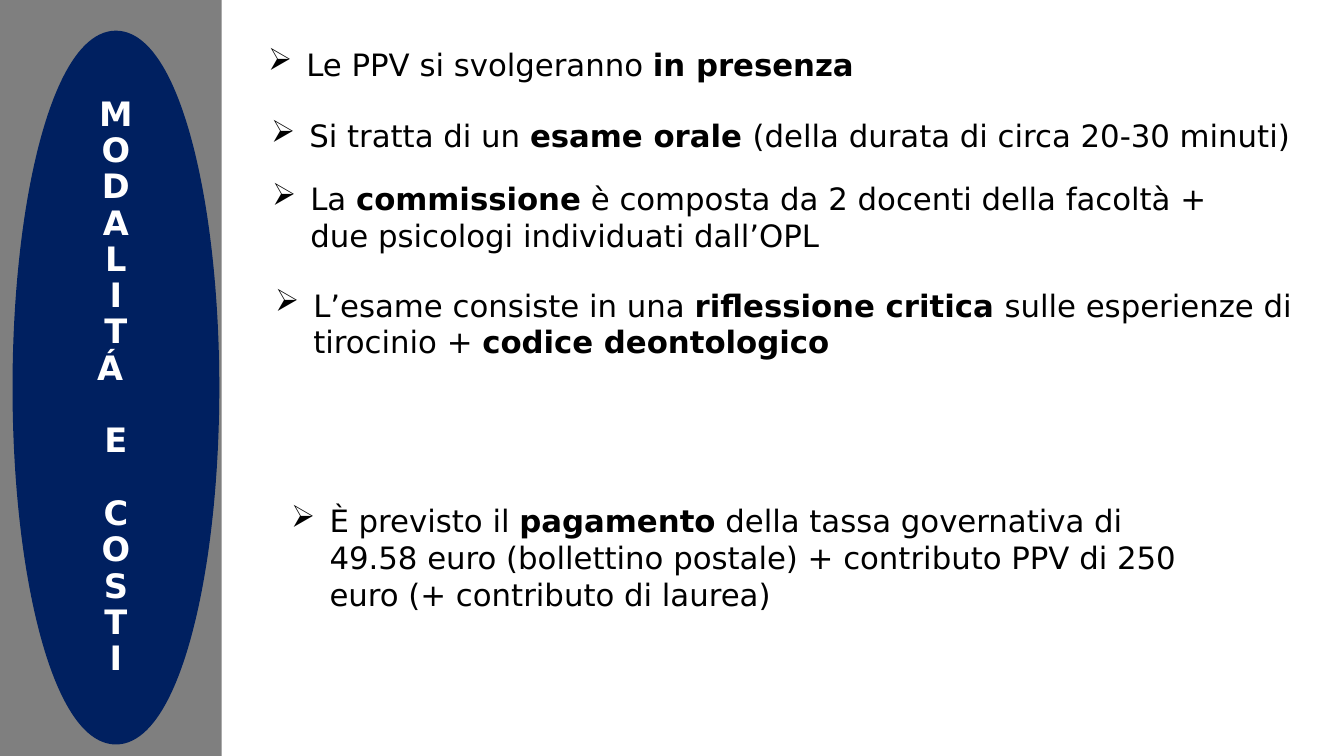
from dataclasses import dataclass

from lxml.etree import SubElement
from pptx import Presentation
from pptx.dml.color import RGBColor
from pptx.enum.shapes import MSO_SHAPE
from pptx.enum.text import MSO_ANCHOR, MSO_AUTO_SIZE, PP_ALIGN
from pptx.oxml.ns import qn
from pptx.util import Inches, Pt


@dataclass(frozen=True)
class Theme:
    font: str = "DejaVu Sans"
    band: RGBColor = RGBColor(0x7F, 0x7F, 0x7F)
    navy: RGBColor = RGBColor(0x00, 0x20, 0x60)
    ink: RGBColor = RGBColor(0, 0, 0)
    white: RGBColor = RGBColor(0xFF, 0xFF, 0xFF)
    body_size: float = 22
    title_size: float = 24
    title_spacing: float = 0.9
    word_gap: float = 26
    outline: float = 13.75


THEME = Theme()
TITLE_WORDS = ["MODALITÁ", "E", "COSTI"]
POINTS = [
    (2.56, 0.4, 9.28, 0.47, "Le PPV si svolgeranno **in presenza**"),
    (2.59, 1.11, 10.53, 0.47,
     "Si tratta di un **esame orale **(della durata di circa 20-30 minuti)"),
    (2.6, 1.73, 10.53, 0.84,
     "La **commissione** è composta da 2 docenti della facoltà +\n"
     "due psicologi individuati dall’OPL"),
    (2.63, 2.79, 10.53, 1.21,
     "L’esame consiste in una **riflessione critica **sulle esperienze di "
     "tirocinio + **codice deontologico**"),
    (2.79, 4.93, 9.28, 1.21,
     "È previsto il **pagamento** della tassa governativa di 49.58 euro "
     "(bollettino postale) + contributo PPV di 250 euro (+ contributo di laurea)"),
]


def write(p, text, *, size, color, bold=False):
    for i, part in enumerate(text.split("**")):
        for j, line in enumerate(part.split("\n")):
            if j:
                p.add_line_break()
            if line:
                r = p.add_run()
                r.text = line
                r.font.name = THEME.font
                r.font.size = Pt(size)
                r.font.color.rgb = color
                r.font.bold = bold or i % 2 == 1


def add_filled(s, kind, box, color, outline=0):
    sp = s.shapes.add_shape(kind, *map(Inches, box))
    sp.shadow.inherit = False
    sp.fill.solid()
    sp.fill.fore_color.rgb = color
    if outline:
        sp.line.color.rgb = color
        sp.line.width = Pt(outline)
    else:
        sp.line.fill.background()
    return sp


def add_vertical_title(s, box, words):
    sp = add_filled(s, MSO_SHAPE.OVAL, box, THEME.navy, THEME.outline)
    tf = sp.text_frame
    tf.word_wrap = True
    tf.vertical_anchor = MSO_ANCHOR.MIDDLE
    p = tf.paragraphs[0]
    for i, word in enumerate(words):
        for j, letter in enumerate(word):
            if i or j:
                p = tf.add_paragraph()
            p.alignment = PP_ALIGN.CENTER
            p.line_spacing = THEME.title_spacing
            if i and not j:
                p.space_before = Pt(THEME.word_gap)
            text = letter + " " if letter == "Á" else letter
            write(p, text, size=THEME.title_size, color=THEME.white, bold=True)


def add_point(s, box, text):
    tf = s.shapes.add_textbox(*map(Inches, box)).text_frame
    tf.word_wrap = True
    tf.auto_size = MSO_AUTO_SIZE.SHAPE_TO_FIT_TEXT
    p = tf.paragraphs[0]
    pPr = p._p.get_or_add_pPr()
    pPr.set("marL", str(Inches(0.38)))
    pPr.set("indent", str(Inches(-0.38)))
    SubElement(pPr, qn("a:buChar"), char="➢")
    write(p, text, size=THEME.body_size, color=THEME.ink)


def main():
    prs = Presentation()
    prs.slide_width, prs.slide_height = Inches(13.33), Inches(7.5)
    s = prs.slides.add_slide(prs.slide_layouts[6])
    add_filled(s, MSO_SHAPE.RECTANGLE, (0, 0, 2.2, 7.5), THEME.band)
    add_vertical_title(s, (0.22, 0.4, 1.86, 6.89), TITLE_WORDS)
    for *box, text in POINTS:
        add_point(s, box, text)
    prs.save("out.pptx")


if __name__ == "__main__":
    main()
